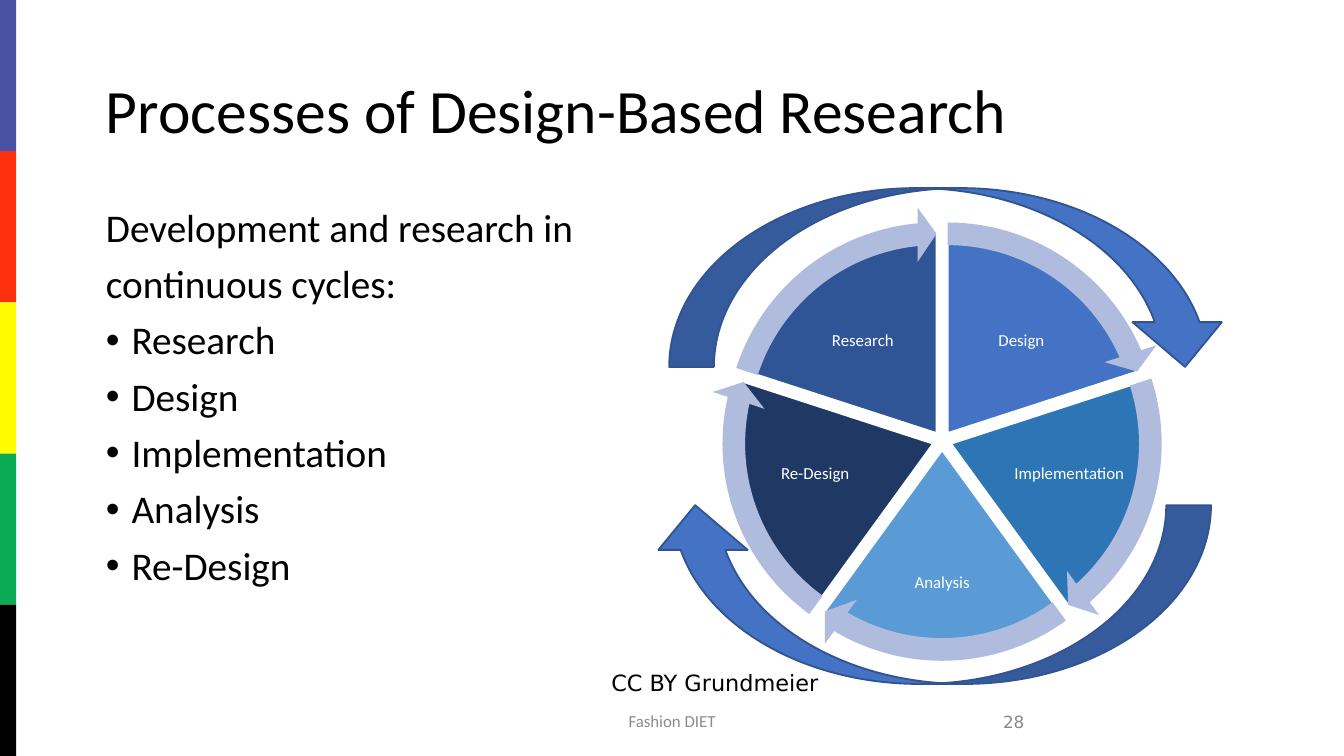
import math
from dataclasses import dataclass
from lxml import etree
from pptx import Presentation
from pptx import util as u
from pptx.dml.color import RGBColor
from pptx.enum import shapes, text
from pptx.oxml.ns import qn

# Lengths are in grid cells, each 1/100 of the slide width
W = u.Inches(10)
H = W * 9 // 16
CELL = W / 100
COLORS = {
    "black": "000000", "white": "FFFFFF", "footer": "8C8C8C", "number": "898989",
    "ring": "B0BCDE", "blue": "4472C4", "outline": "325491",
}
STRIPE = ["4952A4", "FC300D", "FFFB00", "0BAA54", "000000"]
HUB = (70.1, 32.8)
GAP, PIE, RING = 0.7, 30, 33.7
STEP = 72  # degrees per phase
TURN = 0.6  # adjustment units per degree
SHAPE, ALIGN = shapes.MSO_SHAPE, text.PP_ALIGN
MIDDLE = text.MSO_ANCHOR.MIDDLE


@dataclass
class Box:
    x: float
    y: float
    w: float
    h: float


@dataclass
class Label:
    box: Box
    lines: list
    size: float
    color: str = "black"
    font: str = "Calibri"
    align: ALIGN = ALIGN.LEFT
    anchor: text.MSO_ANCHOR = MIDDLE
    spacing: float = 1.0
    inset: float = None
    bullets_from: int = 99


@dataclass
class Phase:
    name: str
    fill: str
    dx: float  # label centre, from the hub
    dy: float
    w: float
    h: float


PHASES = [
    Phase("Design", "4472C4", 5.9, -7.4, 9.6, 6.4),
    Phase("Implementation", "2E75B6", 9.45, 2.45, 8.9, 7.1),
    Phase("Analysis", "5B9BD5", 0, 10.6, 8.6, 7.8),
    Phase("Re-Design", "203864", -9.45, 2.45, 8.9, 7.1),
    Phase("Research", "2F5597", -5.9, -7.4, 9.6, 6.4),
]


def emu(b: Box) -> list:
    return [round(v * CELL) for v in (b.x, b.y, b.w, b.h)]


def centred(cx: float, cy: float, w: float, h: float) -> Box:
    return Box(cx - w / 2, cy - h / 2, w, h)


def rgb(name: str) -> RGBColor:
    return RGBColor.from_string(COLORS.get(name, name))


def add_shape(s, kind, box: Box, fill: str, line: str = None, adj: tuple = ()):
    sp = s.shapes.add_shape(kind, *emu(box))
    sp.shadow.inherit = False
    sp.fill.solid()
    sp.fill.fore_color.rgb = rgb(fill)
    if line:
        sp.line.color.rgb = rgb(line)
        sp.line.width = u.Pt(1)
    else:
        sp.line.fill.background()
    for i, value in enumerate(adj):
        sp.adjustments[i] = value
    return sp


def add_bullet(p) -> None:
    pPr = p._p.get_or_add_pPr()
    pPr.set("marL", str(u.Inches(0.19)))
    pPr.set("indent", str(-u.Inches(0.19)))
    etree.SubElement(pPr, qn("a:buFont")).set("typeface", "Arial")
    etree.SubElement(pPr, qn("a:buChar")).set("char", "•")


def add_label(s, label: Label) -> None:
    tf = s.shapes.add_textbox(*emu(label.box)).text_frame
    frame = {"word_wrap": True, "vertical_anchor": label.anchor}
    if label.inset is not None:
        for side in ("left", "right", "top", "bottom"):
            frame[f"margin_{side}"] = u.Inches(label.inset)
    for key, value in frame.items():
        setattr(tf, key, value)
    for i, line in enumerate(label.lines):
        p = tf.add_paragraph() if i else tf.paragraphs[0]
        p.alignment = label.align
        p.line_spacing = label.spacing
        if i:
            p.space_before = u.Pt(7.5)
        if i >= label.bullets_from:
            add_bullet(p)
        r = p.add_run()
        r.text = line
        for key, value in {"size": u.Pt(label.size), "name": label.font}.items():
            setattr(r.font, key, value)
        r.font.color.rgb = rgb(label.color)


def add_cycle(s) -> None:
    rings = []
    for i, phase in enumerate(PHASES):
        start = (270 + STEP * i) % 360
        middle = math.radians(start + STEP / 2)
        cx = HUB[0] + GAP * math.cos(middle)
        cy = HUB[1] + GAP * math.sin(middle)
        end = (start + STEP) % 360
        add_shape(s, SHAPE.PIE, centred(cx, cy, PIE, PIE), phase.fill, "white",
                  (start * TURN, end * TURN))
        box = centred(HUB[0] + phase.dx, HUB[1] + phase.dy, phase.w, phase.h)
        add_label(s, Label(box, [phase.name], 9, "white", align=ALIGN.CENTER,
                           spacing=0.9, inset=0.01))
        head = (start + 66.54) % 360
        rings.append((centred(cx, cy, RING, RING),
                      (0.05, 3.28, head * TURN, start * TURN, 0.06)))
    # Ring arrows lie above all the slices
    for box, adj in rings:
        add_shape(s, SHAPE.CIRCULAR_ARROW, box, "ring", adj=adj)


def add_outer_arrow(s, box: Box, rotation: int) -> None:
    sp = add_shape(s, SHAPE.CURVED_RIGHT_ARROW, box, "blue", "outline")
    sp.rotation = rotation
    sp._element.spPr.find(qn("a:xfrm")).set("flipV", "1")


def main() -> None:
    prs = Presentation()
    prs.slide_width, prs.slide_height = W, H
    s = prs.slides.add_slide(prs.slide_layouts[6])

    # Colour stripe on the left edge
    band = 56.25 / len(STRIPE)
    for i, color in enumerate(STRIPE):
        add_shape(s, SHAPE.RECTANGLE, Box(0, i * band, 1.2, band), color)

    # Title, body and footer
    body = ["Development and research in", "continuous cycles:",
            "Research", "Design", "Implementation", "Analysis", "Re-Design"]
    for label in (
        Label(Box(6.9, 3, 86.2, 10.9), ["Processes of Design-Based Research"], 33,
              spacing=0.9),
        Label(Box(6.9, 15, 86.2, 35.7), body, 21, anchor=text.MSO_ANCHOR.TOP,
              spacing=0.9, bullets_from=2),
        Label(Box(33.1, 52.1, 33.8, 3), ["Fashion DIET"], 9, "footer",
              align=ALIGN.CENTER),
        Label(Box(54.7, 52.2, 22.5, 3), ["28"], 9, "number", "DejaVu Sans",
              ALIGN.RIGHT),
    ):
        add_label(s, label)

    # Cycle diagram with its two outer arrows
    add_cycle(s)
    add_outer_arrow(s, Box(64, -0.2, 13.3, 41.7), 90)
    add_outer_arrow(s, Box(62.6, 23.4, 13.3, 41.7), 270)

    # Licence line
    add_label(s, Label(Box(44.5, 49.3, 17.7, 3), ["CC BY Grundmeier"], 12,
                       font="DejaVu Sans", anchor=text.MSO_ANCHOR.TOP))
    prs.save("out.pptx")


if __name__ == "__main__":
    main()
